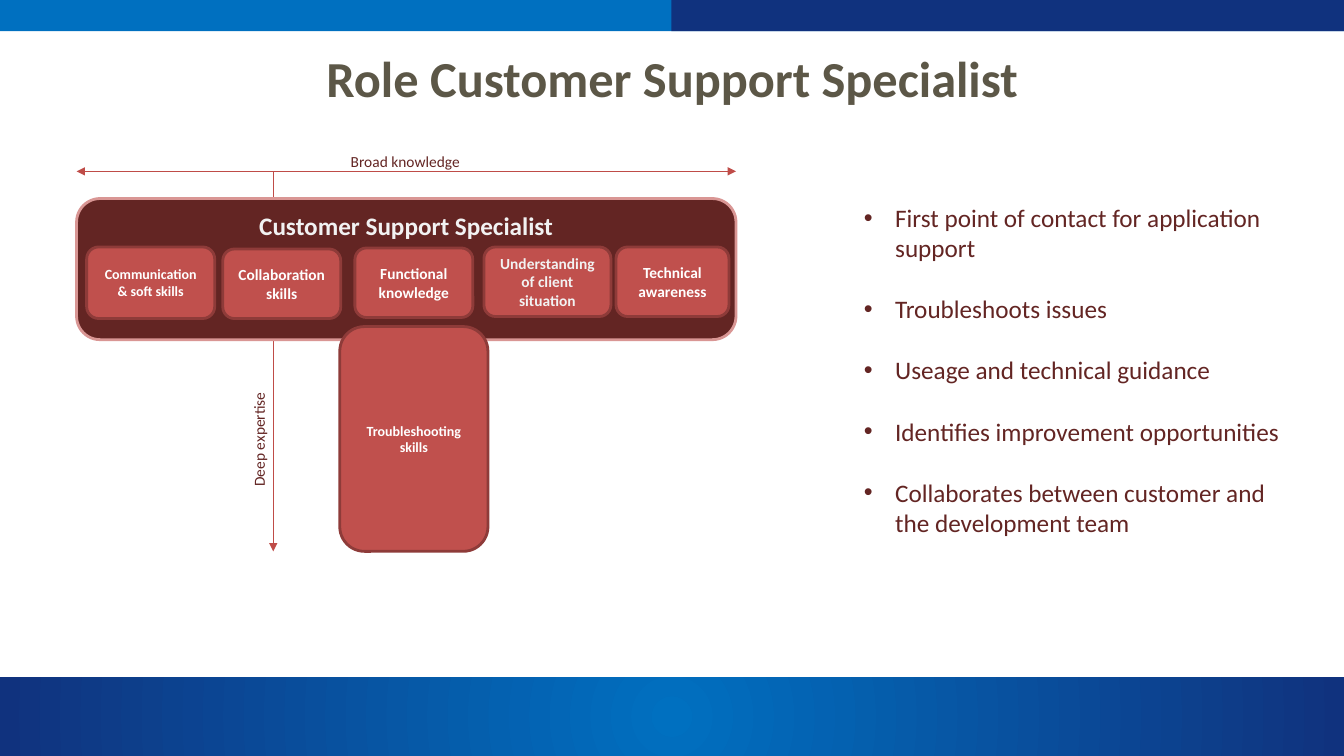
from lxml import etree
from pptx import Presentation
from pptx.dml.color import RGBColor
from pptx.enum.shapes import MSO_CONNECTOR, MSO_SHAPE
from pptx.enum.text import MSO_ANCHOR, PP_ALIGN
from pptx.oxml.ns import qn
from pptx.util import Pt

PX = 9144
RECT, ROUND = MSO_SHAPE.RECTANGLE, MSO_SHAPE.ROUNDED_RECTANGLE
STRAIGHT = MSO_CONNECTOR.STRAIGHT
TOP, MIDDLE = MSO_ANCHOR.TOP, MSO_ANCHOR.MIDDLE
LEFT, CENTER = PP_ALIGN.LEFT, PP_ALIGN.CENTER
FONT = "Calibri"
BLUE, NAVY = "0070C0", "10327E"
MAROON, RED, DARK_RED, PINK = "632523", "C0504D", "8E3B39", "D99694"
ARROW_RED, WHITE, PALE, TAUPE = "BF4C48", "FFFFFF", "F2F2F2", "5C5747"

SKILLS = [
    ("Communication & soft skills", 10, 48, 127, 71, 10, WHITE),
    ("Collaboration skills", 145, 50, 117, 69, 11, WHITE),
    ("Functional knowledge", 276, 49, 117, 69, 11, WHITE),
    ("Understanding of client situation", 404, 48, 126, 69, 11, PALE),
    ("Technical awareness", 535, 48, 112, 69, 11, WHITE),
]
DUTIES = [
    "First point of contact for application support",
    "Troubleshoots issues",
    "Useage and technical guidance",
    "Identifies improvement opportunities",
    "Collaborates between customer and the development team",
]


def color(value):
    """Turn a hex string into a colour."""
    return RGBColor.from_string(value)


def emu(*lengths):
    """Turn px lengths into EMU."""
    return [n * PX for n in lengths]


def style_text(p, size, hex_color, bold=False, align=LEFT):
    """Format a paragraph and its runs."""
    p.alignment = align
    for r in p.runs:
        r.font.name, r.font.size, r.font.bold = FONT, Pt(size), bold
        r.font.color.rgb = color(hex_color)


def add_band(s, x, y, w, h, fill):
    """Add a plain rectangle without outline."""
    sp = s.shapes.add_shape(RECT, *emu(x, y, w, h))
    sp.shadow.inherit = False
    sp.fill.solid()
    sp.fill.fore_color.rgb = color(fill)
    sp.line.fill.background()
    return sp


def add_card(s, x, y, w, h, text, size, text_color=WHITE, fill=RED, line=DARK_RED, anchor=MIDDLE):
    """Add a rounded card with bold centred text."""
    sp = s.shapes.add_shape(ROUND, *emu(x, y, w, h))
    sp.shadow.inherit = False
    sp.fill.solid()
    sp.fill.fore_color.rgb = color(fill)
    sp.line.color.rgb = color(line)
    sp.line.width = Pt(2)
    tf = sp.text_frame
    tf.word_wrap = True
    tf.vertical_anchor = anchor
    tf.text = text
    style_text(tf.paragraphs[0], size, text_color, True, CENTER)


def add_label(s, x, y, w, h, text, wrap=True, rotation=0):
    """Add a small axis label."""
    sp = s.shapes.add_textbox(*emu(x, y, w, h))
    sp.rotation = rotation
    tf = sp.text_frame
    tf.word_wrap = wrap
    tf.text = text
    style_text(tf.paragraphs[0], 11, MAROON)


def add_arrow(s, x1, y1, x2, y2, ends):
    """Add a thin line with triangles at the named ends."""
    line = s.shapes.add_connector(STRAIGHT, *emu(x1, y1, x2, y2))
    line.line.color.rgb = color(ARROW_RED)
    line.line.width = Pt(0.75)
    ln = line.line._get_or_add_ln()
    for end in ends:
        etree.SubElement(ln, qn("a:" + end), type="triangle")
    etree.SubElement(line._element.spPr, qn("a:effectLst"))


def add_header(s, x, y, w, h):
    """Add the two-tone band along the top."""
    add_band(s, x, y, w, h, BLUE)
    add_band(s, x + w // 2, y, w - w // 2, h, NAVY)


def add_footer(s, x, y, w, h):
    """Add the bottom band with a circular gradient."""
    sp = add_band(s, x, y, w, h, BLUE)
    sp.fill.gradient()
    for stop, value in zip(sp.fill.gradient_stops, (BLUE, NAVY)):
        stop.color.rgb = color(value)
    grad = sp._element.spPr.find(qn("a:gradFill"))
    grad.remove(grad.find(qn("a:lin")))
    circle = etree.SubElement(grad, qn("a:path"), path="circle")
    etree.SubElement(circle, qn("a:fillToRect"), l="50000", t="50000", r="50000", b="50000")


def add_title(s, x, y, w, h):
    """Place and format the title."""
    sp = s.shapes.title
    sp.left, sp.top, sp.width, sp.height = emu(x, y, w, h)
    tf = sp.text_frame
    tf.text = "Role Customer Support Specialist"
    tf.vertical_anchor = MIDDLE
    style_text(tf.paragraphs[0], 36, TAUPE, True, CENTER)


def add_t_profile(s, x, y, w, h):
    """Draw the T-shaped skill profile with its two axes."""
    bar = y + 27
    add_arrow(s, x + 195, y, x + 195, y + h, ["tailEnd"])
    add_card(s, x, bar, w, 140, "Customer Support Specialist", 18, PALE, MAROON, PINK, TOP)
    for text, dx, dy, cw, ch, size, text_color in SKILLS:
        add_card(s, x + dx, bar + dy, cw, ch, text, size, text_color)
    add_card(s, x + 261, y + 154, 147, h - 154, "Troubleshooting skills", 10)
    add_arrow(s, x, y, x + w, y, ["headEnd", "tailEnd"])
    add_label(s, x + 262, y - 24, 129, 29, "Broad knowledge", wrap=False)
    add_label(s, x + 111, y + 238, 140, 29, "Deep expertise", rotation=270)


def add_duties(s, x, y, w, h):
    """List the duties of the role as bullets."""
    tf = s.shapes.add_textbox(*emu(x, y, w, h)).text_frame
    tf.word_wrap = True
    for i, duty in enumerate(DUTIES):
        p = tf.paragraphs[0] if i == 0 else tf.add_paragraph()
        p.text = duty
        pPr = p._p.get_or_add_pPr()
        pPr.set("marL", str(31 * PX))
        pPr.set("indent", str(-31 * PX))
        etree.SubElement(pPr, qn("a:buFont"), typeface="Arial")
        etree.SubElement(pPr, qn("a:buChar"), char="•")
        if i:
            p.space_before = Pt(22)
        style_text(p, 18, MAROON)


def main():
    """Build and save the slide."""
    prs = Presentation()
    prs.slide_width, prs.slide_height = emu(1333, 750)
    s = prs.slides.add_slide(prs.slide_layouts[5])
    add_footer(s, 0, 672, 1333, 78)
    add_header(s, 0, 0, 1333, 31)
    add_title(s, 67, 30, 1200, 93)
    add_t_profile(s, 76, 170, 654, 377)
    add_duties(s, 847, 196, 435, 344)
    prs.save("out.pptx")


if __name__ == "__main__":
    main()
